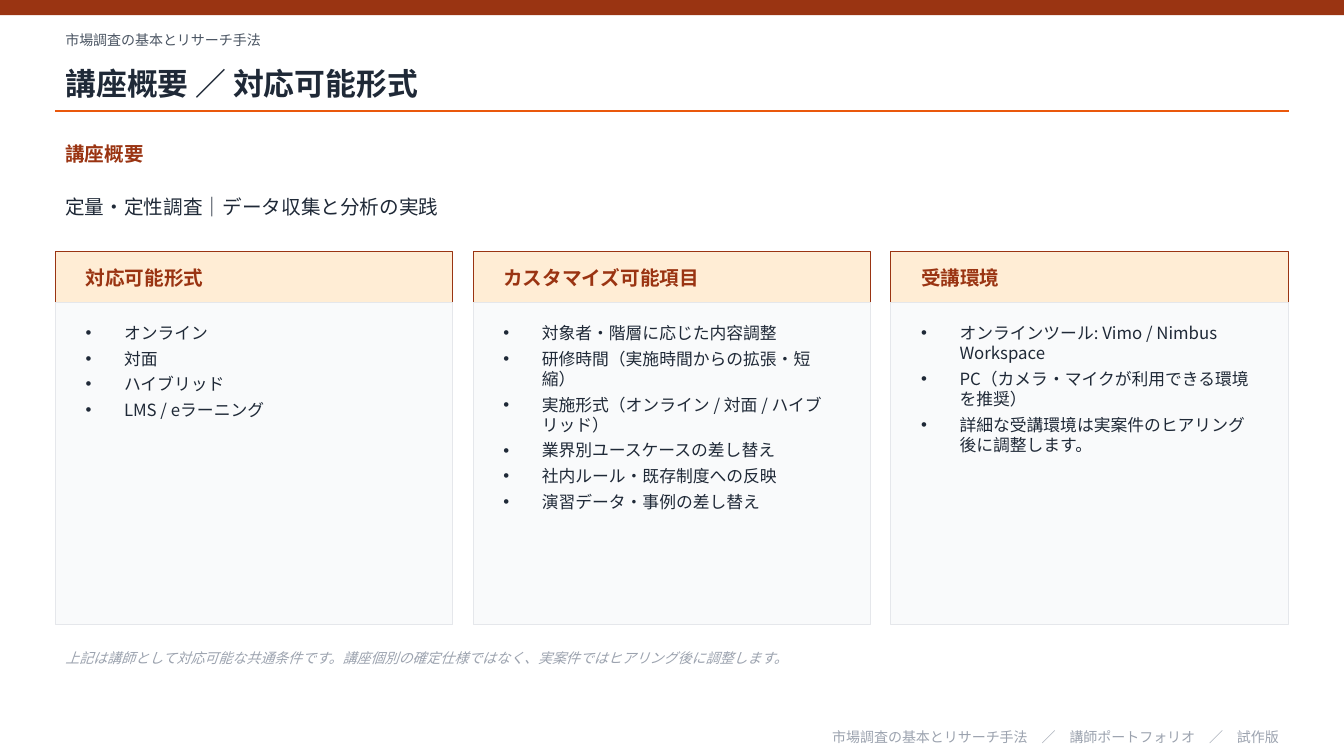
from dataclasses import dataclass

from lxml.etree import SubElement
from pptx import Presentation
from pptx.dml.color import RGBColor
from pptx.enum.shapes import MSO_CONNECTOR, MSO_SHAPE
from pptx.enum.text import MSO_ANCHOR, MSO_AUTO_SIZE, PP_ALIGN
from pptx.oxml.ns import qn
from pptx.util import Inches, Pt

COURSE = "市場調査の基本とリサーチ手法"
TITLE = "講座概要 ／ 対応可能形式"
SECTION = "講座概要"
SUMMARY = "定量・定性調査｜データ収集と分析の実践"
CARDS = [
    ("対応可能形式", ["オンライン", "対面", "ハイブリッド", "LMS / eラーニング"]),
    ("カスタマイズ可能項目", [
        "対象者・階層に応じた内容調整",
        "研修時間（実施時間からの拡張・短縮）",
        "実施形式（オンライン / 対面 / ハイブリッド）",
        "業界別ユースケースの差し替え",
        "社内ルール・既存制度への反映",
        "演習データ・事例の差し替え",
    ]),
    ("受講環境", [
        "オンラインツール: Vimo / Nimbus Workspace",
        "PC（カメラ・マイクが利用できる環境を推奨）",
        "詳細な受講環境は実案件のヒアリング後に調整します。",
    ]),
]
NOTE = "上記は講師として対応可能な共通条件です。講座個別の確定仕様ではなく、実案件ではヒアリング後に調整します。"
FOOTER = f"{COURSE}　／　講師ポートフォリオ　／　試作版"


@dataclass(frozen=True)
class Theme:
    font: str = "Noto Sans CJK JP"
    brand: str = "9A3412"
    accent: str = "EA580C"
    header_fill: str = "FFEDD5"
    card_fill: str = "F9FAFB"
    card_line: str = "E5E7EB"
    ink: str = "1F2937"
    secondary: str = "4B5563"
    muted: str = "9CA3AF"
    title_size: int = 22
    heading_size: int = 14
    list_size: int = 12
    small_size: int = 10


THEME = Theme()
SLIDE_WIDTH, SLIDE_HEIGHT = 13.33, 7.5
LEFT, CONTENT_WIDTH = 0.55, 12.23
GAP, PADDING = 0.2, 0.2
CARD_TOP, HEADER_HEIGHT, BODY_HEIGHT = 2.5, 0.5, 3.2
CARD_WIDTH = (CONTENT_WIDTH - GAP * (len(CARDS) - 1)) / len(CARDS)
BULLET_INDENT = 0.38


def place(shape, left, top, width, height):
    for name, value in {"left": left, "top": top, "width": width, "height": height}.items():
        setattr(shape, name, Inches(value))


def add_bullet(paragraph):
    properties = paragraph._p.get_or_add_pPr()
    properties.set("marL", str(Inches(BULLET_INDENT)))
    properties.set("indent", str(-Inches(BULLET_INDENT)))
    SubElement(properties, qn("a:buChar"), char="•")


def write(shape, lines, size, color, bold=False, italic=False,
          align=PP_ALIGN.LEFT, anchor=MSO_ANCHOR.MIDDLE, bullets=False):
    frame = shape.text_frame
    frame.word_wrap = True
    frame.auto_size = MSO_AUTO_SIZE.NONE
    frame.vertical_anchor = anchor
    for index, line in enumerate(lines):
        paragraph = frame.paragraphs[0] if index == 0 else frame.add_paragraph()
        if bullets:
            add_bullet(paragraph)
        paragraph.alignment = align
        paragraph.space_before = Pt(0)
        paragraph.space_after = Pt(4 if bullets else 0)
        run = paragraph.add_run()
        run.text = line
        formats = {"name": THEME.font, "size": Pt(size), "bold": bold, "italic": italic}
        for name, value in formats.items():
            setattr(run.font, name, value)
        run.font.color.rgb = RGBColor.from_string(color)
        SubElement(run._r.get_or_add_rPr(), qn("a:ea"), typeface=THEME.font)


def add_text(slide, box, text, size, color, **formats):
    shape = slide.shapes.add_textbox(*map(Inches, box))
    write(shape, [text], size, color, **formats)


def add_rectangle(slide, box, fill, line=None):
    shape = slide.shapes.add_shape(MSO_SHAPE.RECTANGLE, *map(Inches, box))
    shape.shadow.inherit = False
    shape.fill.solid()
    shape.fill.fore_color.rgb = RGBColor.from_string(fill)
    if line:
        shape.line.color.rgb = RGBColor.from_string(line)
        shape.line.width = Pt(0.75)
    else:
        shape.line.fill.background()


def add_title_rule(slide, top):
    rule = slide.shapes.add_connector(
        MSO_CONNECTOR.STRAIGHT, Inches(LEFT), Inches(top),
        Inches(LEFT + CONTENT_WIDTH), Inches(top))
    rule.line.color.rgb = RGBColor.from_string(THEME.accent)
    rule.line.width = Pt(1)
    SubElement(rule._element.spPr, qn("a:effectLst"))


def add_card(slide, index, heading, items, list_placeholder):
    left = LEFT + index * (CARD_WIDTH + GAP)
    inner_left, inner_width = left + PADDING, CARD_WIDTH - 2 * PADDING
    body_top = CARD_TOP + HEADER_HEIGHT
    add_rectangle(slide, (left, CARD_TOP, CARD_WIDTH, HEADER_HEIGHT),
                  THEME.header_fill, THEME.brand)
    add_text(slide, (inner_left, CARD_TOP, inner_width, HEADER_HEIGHT), heading,
             THEME.heading_size, THEME.brand, bold=True)
    add_rectangle(slide, (left, body_top, CARD_WIDTH, BODY_HEIGHT),
                  THEME.card_fill, THEME.card_line)
    place(list_placeholder, inner_left, body_top + 0.15, inner_width, 2.85)
    write(list_placeholder, items, THEME.list_size, THEME.ink,
          anchor=MSO_ANCHOR.TOP, bullets=True)
    bring_to_front(list_placeholder)


def bring_to_front(shape):
    shape.element.getparent().append(shape.element)


def main():
    presentation = Presentation()
    presentation.slide_width = Inches(SLIDE_WIDTH)
    presentation.slide_height = Inches(SLIDE_HEIGHT)
    slide = presentation.slides.add_slide(presentation.slide_layouts.get_by_name("Comparison"))
    title, *lists, spare = list(slide.placeholders)
    spare.element.getparent().remove(spare.element)

    add_rectangle(slide, (0, 0, SLIDE_WIDTH, 0.15), THEME.brand)
    add_text(slide, (LEFT, 0.25, CONTENT_WIDTH, 0.3), COURSE,
             THEME.small_size, THEME.secondary)
    place(title, LEFT, 0.55, CONTENT_WIDTH, 0.55)
    write(title, [TITLE], THEME.title_size, THEME.ink, bold=True)
    bring_to_front(title)
    add_title_rule(slide, 1.1)
    add_text(slide, (LEFT, 1.35, CONTENT_WIDTH, 0.35), SECTION,
             THEME.heading_size, THEME.brand, bold=True)
    add_text(slide, (LEFT, 1.75, CONTENT_WIDTH, 0.6), SUMMARY,
             THEME.heading_size, THEME.ink)
    for index, ((heading, items), list_placeholder) in enumerate(zip(CARDS, lists)):
        add_card(slide, index, heading, items, list_placeholder)
    add_text(slide, (LEFT, 6.35, CONTENT_WIDTH, 0.35), NOTE,
             THEME.small_size, THEME.muted, italic=True)
    add_text(slide, (LEFT, 7.2, CONTENT_WIDTH, 0.22), FOOTER,
             THEME.small_size, THEME.muted, align=PP_ALIGN.RIGHT)
    presentation.save("out.pptx")


if __name__ == "__main__":
    main()
